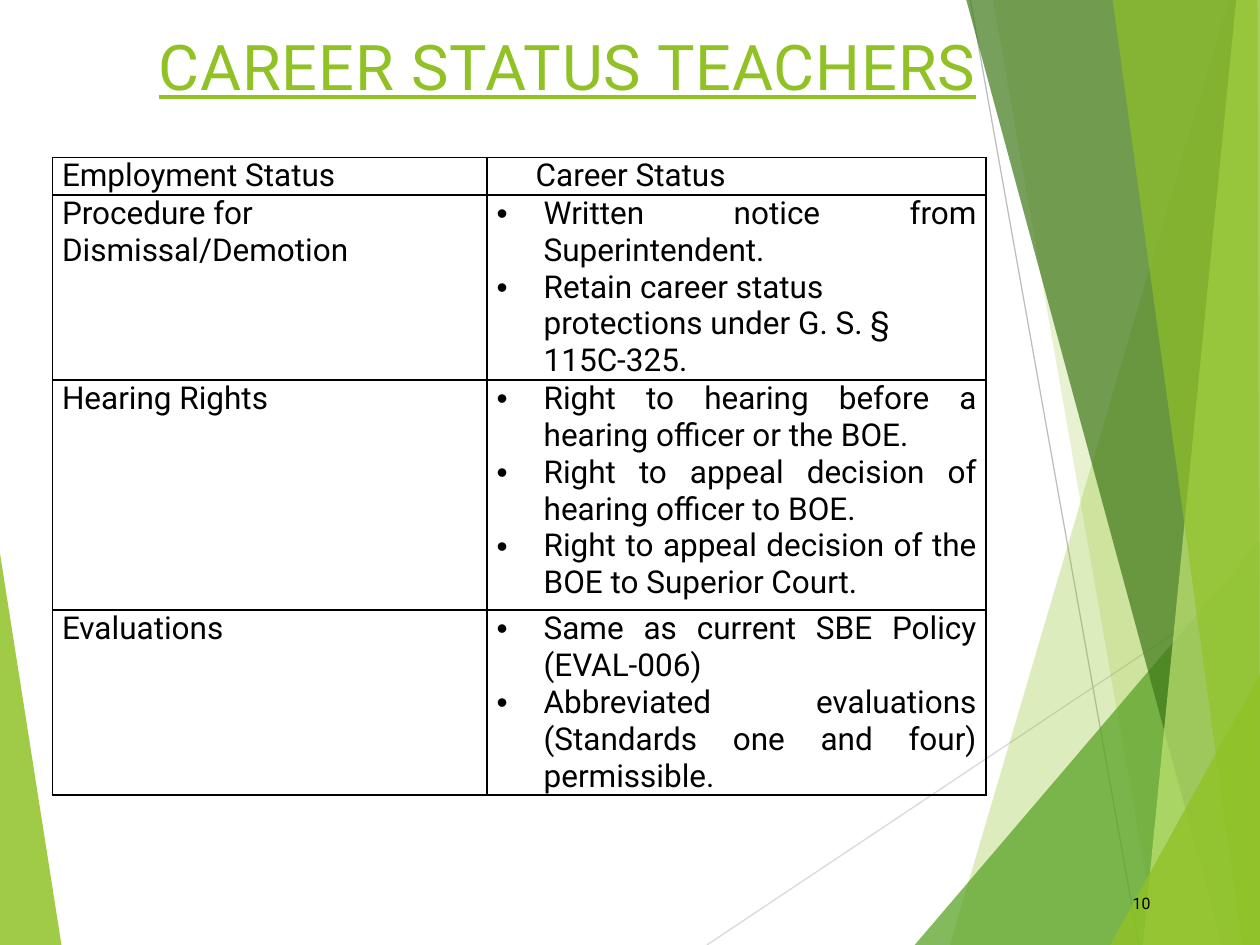
import pptx
import pptx.util
import pptx.dml.color
import pptx.enum.shapes
import pptx.enum.text
import pptx.oxml
import pptx.oxml.ns
from lxml import etree
from dataclasses import dataclass

Cm = pptx.util.Cm
ALIGN = pptx.enum.text.PP_ALIGN
ANCHOR = pptx.enum.text.MSO_ANCHOR
qn = pptx.oxml.ns.qn


@dataclass(frozen=True)
class Theme:
    font: str = "Roboto"
    title_size: int = 36
    body_size: int = 18
    number_size: int = 9
    ink: str = "000000"
    lime: str = "90C226"
    green: str = "54A021"
    forest: str = "3F7819"
    pale: str = "C0E474"
    light_gray: str = "D9D9D9"
    mid_gray: str = "BFBFBF"


theme = Theme()


def rgb(value):
    return pptx.dml.color.RGBColor.from_string(value)


def write(frame, text, size=theme.body_size, color=theme.ink, align=ALIGN.LEFT,
          underline=False, spacing=0, indent=0, bullet=False):
    """Add one paragraph, using the empty first one if there is one."""
    paragraph = frame.paragraphs[0]
    if paragraph.runs:
        paragraph = frame.add_paragraph()
    paragraph.alignment = align
    run = paragraph.add_run()
    run.text = text
    run.font.name = theme.font
    run.font.size = pptx.util.Pt(size)
    run.font.color.rgb = rgb(color)
    if underline:
        run.font.underline = True
    if spacing:
        run.font._element.set("spc", str(spacing))
    properties = paragraph._p.get_or_add_pPr()
    properties.set("marL", str(Cm(indent)))
    properties.set("indent", str(-Cm(indent) if bullet else 0))
    if bullet:
        etree.SubElement(properties, qn("a:buFont"), typeface="Arial")
        etree.SubElement(properties, qn("a:buChar"), char="•")


deck = pptx.Presentation()
deck.slide_width, deck.slide_height = Cm(25.4), Cm(19.05)
slide = deck.slides.add_slide(deck.slide_layouts[6])
shapes = slide.shapes
right, bottom = 25.4, 19.05

# Thin crossing lines behind the facets
for start, end, color in [
    ((14.25, bottom), (right, 11.61), theme.light_gray),
    ((19.56, 0), (22.96, bottom), theme.mid_gray),
]:
    ray = shapes.add_connector(pptx.enum.shapes.MSO_CONNECTOR.STRAIGHT,
                               *map(Cm, start + end))
    ray.line.color.rgb = rgb(color)
    ray.line.width = pptx.util.Pt(0.75)
    etree.SubElement(ray._element.spPr, qn("a:effectLst"))

# Translucent facets: colour, opacity in percent, corners
corner = (right, bottom)
top_corner = (right, 0)
facets = [
    (theme.lime, 85, [(0, 11.15), (1.24, bottom), (0, bottom)]),
    (theme.lime, 30, [(24.77, 0), (19.15, bottom), corner, top_corner]),
    (theme.lime, 20, [(20.02, 0), (23.34, bottom), corner, top_corner]),
    (theme.green, 72, [(18.44, bottom), (right, 10.9), corner]),
    (theme.forest, 70, [(19.48, 0), (24.64, bottom), corner, top_corner]),
    (theme.pale, 70, [(24.92, 0), (23.04, bottom), corner, top_corner]),
    (theme.lime, 65, [(22.43, 0), (25.04, bottom), corner, (25.35, 0)]),
    (theme.lime, 80, [(22.38, bottom), (right, 13.59), corner]),
]
for color, opacity, corners in facets:
    points = [(Cm(x), Cm(y)) for x, y in corners]
    outline = shapes.build_freeform(*points[0])
    outline.add_line_segments(points[1:], close=True)
    facet = outline.convert_to_shape()
    facet.shadow.inherit = False
    facet.line.fill.background()
    facet.fill.solid()
    facet.fill.fore_color.rgb = rgb(color)
    tint = facet._element.spPr.find(qn("a:solidFill"))[0]
    etree.SubElement(tint, qn("a:alpha"), val=str(opacity * 1000))

# Table content: left cell, then (text, alignment) for each bullet
header = ("Employment Status", "Career Status")
topics = [
    ("Procedure for Dismissal/Demotion", [
        ("Written notice from Superintendent.", ALIGN.JUSTIFY),
        ("Retain career status protections under G. S. § 115C-325.", ALIGN.LEFT),
    ]),
    ("Hearing Rights", [
        ("Right to hearing before a hearing officer or the BOE.", ALIGN.JUSTIFY),
        ("Right to appeal decision of hearing officer to BOE.", ALIGN.JUSTIFY),
        ("Right to appeal decision of the BOE to Superior Court.", ALIGN.JUSTIFY),
    ]),
    ("Evaluations", [
        ("Same as current SBE Policy (EVAL-006)", ALIGN.JUSTIFY),
        ("Abbreviated evaluations (Standards one and four) permissible.", ALIGN.JUSTIFY),
    ]),
]
widths = [8.76, 10.06]
heights = [0.76, 3.73, 4.64, 3.73]
rights = shapes.add_table(len(heights), len(widths), Cm(1.06), Cm(3.17),
                          Cm(sum(widths)), Cm(sum(heights))).table
rights.first_row = rights.horz_banding = False
for column, width in zip(rights.columns, widths):
    column.width = Cm(width)
for row, height in zip(rights.rows, heights):
    row.height = Cm(height)

# Plain cells with thin black borders
for cell in rights.iter_cells():
    cell.margin_left = cell.margin_right = Cm(0.19)
    cell.margin_top = cell.margin_bottom = 0
    cell.fill.background()
    cell_properties = cell._tc.get_or_add_tcPr()
    for position, side in enumerate(("lnL", "lnR", "lnT", "lnB")):
        border = etree.Element(qn(f"a:{side}"), w=str(pptx.util.Pt(1)))
        ink = etree.SubElement(border, qn("a:solidFill"))
        etree.SubElement(ink, qn("a:srgbClr"), val=theme.ink)
        cell_properties.insert(position, border)

# Table text
write(rights.cell(0, 0).text_frame, header[0])
write(rights.cell(0, 1).text_frame, header[1], indent=0.79)
for row, (topic, points) in enumerate(topics, start=1):
    write(rights.cell(row, 0).text_frame, topic)
    for point, align in points:
        write(rights.cell(row, 1).text_frame, point, align=align,
              indent=0.95, bullet=True)

# Title and slide number
for text, box, anchor, style in [
    ("CAREER STATUS TEACHERS", (0.43, 0.64, 22.02, 1.57), ANCHOR.BOTTOM,
     dict(size=theme.title_size, color=theme.lime, align=ALIGN.CENTER,
          underline=True, spacing=50)),
    ("10", (22.02, 17.7, 1.42, 1.02), ANCHOR.MIDDLE,
     dict(size=theme.number_size, align=ALIGN.RIGHT)),
]:
    frame = shapes.add_textbox(*map(Cm, box)).text_frame
    frame.word_wrap = True
    frame.vertical_anchor = anchor
    write(frame, text, **style)

deck.save("out.pptx")
